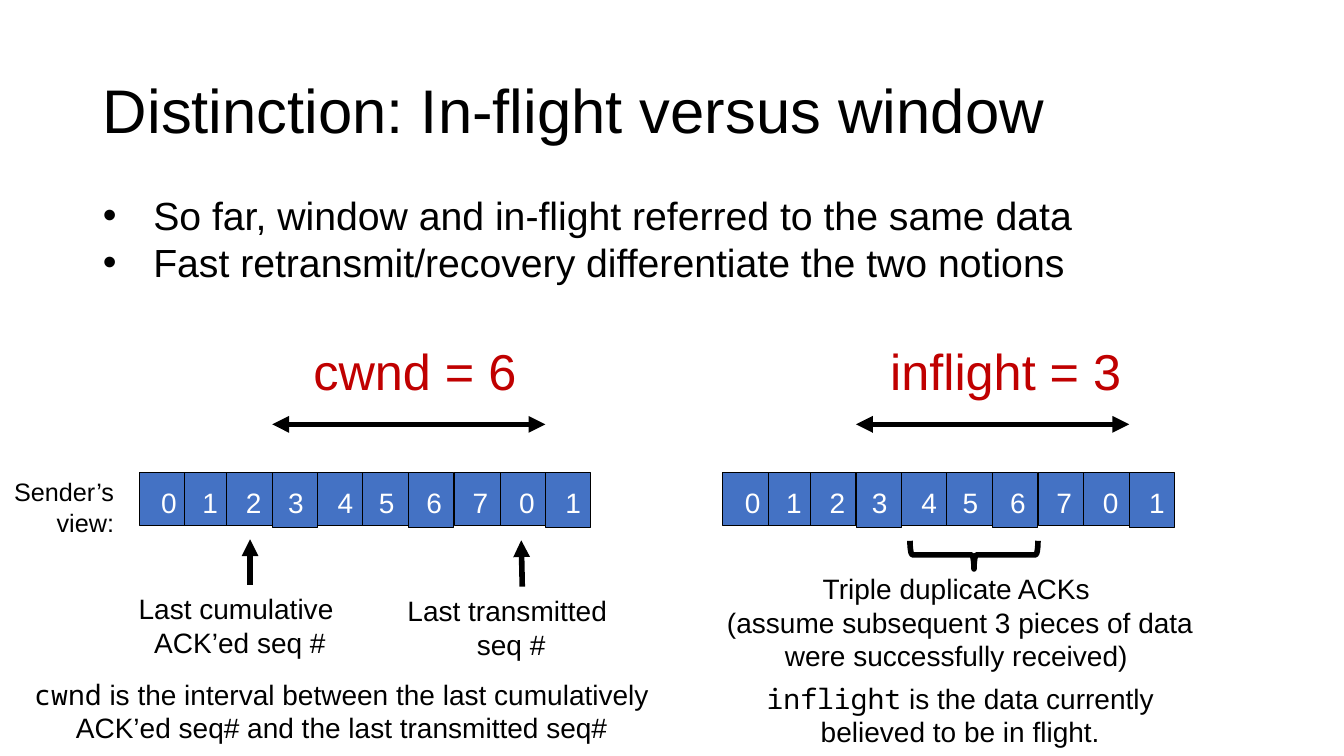
from typing import NamedTuple

from lxml import etree
from pptx import Presentation
from pptx.dml.color import RGBColor
from pptx.enum import shapes as sh, text as tx
from pptx.oxml import ns
from pptx.util import Inches, Pt

BLACK = RGBColor(0x00, 0x00, 0x00)
WHITE = RGBColor(0xFF, 0xFF, 0xFF)
BLUE = RGBColor(0x44, 0x72, 0xC4)
RED = RGBColor(0xC0, 0x00, 0x00)
SANS, MONO = "Arial", "Noto Sans Mono"
LEFT, MID, RIGHT = tx.PP_ALIGN.LEFT, tx.PP_ALIGN.CENTER, tx.PP_ALIGN.RIGHT


class Cell(NamedTuple):
    digit: str
    left: float   # box edge, from the start of the row
    text: float   # digit edge, from the start of the row


class Label(NamedTuple):
    lines: list[str]
    box: tuple[float, float, float, float]
    size: int = 20
    color: RGBColor = BLACK
    align: tx.PP_ALIGN = MID
    code: str = ""   # leading word in the code font


class Arrow(NamedTuple):
    start: tuple[float, float]
    end: tuple[float, float]
    both: bool = False


CELLS = [
    Cell("0", 0, 0.12), Cell("1", 0.45, 0.53), Cell("2", 0.87, 0.96),
    Cell("3", 1.32, 1.38), Cell("4", 1.77, 1.87), Cell("5", 2.22, 2.28),
    Cell("6", 2.67, 2.75), Cell("7", 3.13, 3.21), Cell("0", 3.58, 3.67),
    Cell("1", 4.03, 4.13),
]
ROWS = [1.38, 7.17]
TOP = 4.69

LABELS = [
    Label(["cwnd = 6"], (2.02, 3.32, 4.19, 0.71), 36, RED),
    Label(["inflight = 3"], (8.58, 3.32, 2.79, 0.71), 36, RED),
    Label(["Sender’s view:"], (-0.03, 4.68, 1.26, 0.71), 18, align=RIGHT),
    Label(["Last cumulative ", "ACK’ed seq #"], (1.14, 5.82, 2.48, 0.83)),
    Label(["Last transmitted ", "seq #"], (3.83, 5.84, 2.48, 0.77)),
    Label(["Triple duplicate ACKs",
           " (assume subsequent 3 pieces of data were successfully received)"],
          (7.01, 5.62, 4.95, 1.11)),
    Label([" is the interval between the last cumulatively ACK’ed seq# "
           "and the last transmitted seq#"],
          (0, 6.67, 6.78, 0.77), code="cwnd"),
    Label([" is the data currently believed to be in flight."],
          (7.09, 6.71, 4.87, 0.77), code="inflight"),
]

ARROWS = [
    Arrow((2.7, 4.21), (5.41, 4.21), True),
    Arrow((8.49, 4.21), (11.2, 4.21), True),
    Arrow((2.48, 5.8), (2.48, 5.35)),
    Arrow((5.18, 5.82), (5.17, 5.36)),
]


def style(run, size: int, color: RGBColor, face: str = SANS) -> None:
    run.font.size = Pt(size)
    run.font.name = face
    run.font.color.rgb = color


def place(shape, box: tuple[float, float, float, float]) -> None:
    shape.left, shape.top, shape.width, shape.height = map(Inches, box)


def add_label(slide, label: Label) -> None:
    frame = slide.shapes.add_textbox(*map(Inches, label.box)).text_frame
    frame.word_wrap = True
    frame.text = "\n".join(label.lines)
    for par in frame.paragraphs:
        par.alignment = label.align
        if label.code:
            rest = par.text
            par.text = label.code
            par.add_run().text = rest
        for run in par.runs:
            style(run, label.size, label.color, SANS)
        if label.code:
            par.runs[0].font.name = MONO


def add_arrow(slide, arrow: Arrow) -> None:
    line = slide.shapes.add_connector(
        sh.MSO_CONNECTOR.STRAIGHT, *map(Inches, arrow.start + arrow.end))
    line.line.color.rgb = BLACK
    line.line.width = Pt(4)
    stroke = line.line._get_or_add_ln()
    for tag in ["a:headEnd", "a:tailEnd"] if arrow.both else ["a:tailEnd"]:
        etree.SubElement(stroke, ns.qn(tag), type="triangle")
    etree.SubElement(line._element.spPr, ns.qn("a:effectLst"))


def add_row(slide, start: float) -> None:
    order = list(enumerate(CELLS))
    for i, cell in order[1:] + order[:1]:
        tall = i > 0 and i % 3 == 0
        box = slide.shapes.add_shape(
            sh.MSO_SHAPE.RECTANGLE, Inches(start + cell.left), Inches(TOP),
            Inches(0.45), Inches(0.54 if tall else 0.52))
        box.shadow.inherit = False
        box.fill.solid()
        box.fill.fore_color.rgb = BLUE
        box.line.color.rgb = BLACK
        box.line.width = Pt(0.75)
    for cell in CELLS:
        add_label(slide, Label([cell.digit], (start + cell.text, 4.77, 0.23, 0.34),
                               color=WHITE, align=LEFT))


def add_brace(slide) -> None:
    brace = slide.shapes.add_shape(
        sh.MSO_SHAPE.RIGHT_BRACE, *map(Inches, (9.52, 4.87, 0.28, 1.27)))
    brace.rotation = 90
    brace.shadow.inherit = False
    brace.fill.background()
    brace.line.color.rgb = BLACK
    brace.line.width = Pt(4)


def add_head(slide) -> None:
    title, body = slide.shapes.title, slide.placeholders[1]

    # Title
    place(title, (0.92, 0.4, 11.5, 1.45))
    frame = title.text_frame
    frame.text = "Distinction: In-flight versus window"
    frame.vertical_anchor = tx.MSO_ANCHOR.MIDDLE
    frame.paragraphs[0].alignment = LEFT
    frame.paragraphs[0].line_spacing = 0.9
    style(frame.paragraphs[0].runs[0], 44, BLACK)

    # Bullets
    place(body, (0.92, 1.85, 11.5, 1.04))
    frame = body.text_frame
    frame.text = ("So far, window and in-flight referred to the same data\n"
                  "Fast retransmit/recovery differentiate the two notions")
    frame.auto_size = tx.MSO_AUTO_SIZE.NONE
    for par in frame.paragraphs:
        par.space_before = Pt(0)
        props = par._p.get_or_add_pPr()
        props.set("marL", str(Inches(0.5)))
        props.set("indent", str(Inches(-0.5)))
        etree.SubElement(props, ns.qn("a:buFont"), typeface=SANS)
        etree.SubElement(props, ns.qn("a:buChar"), char="•")
        style(par.runs[0], 28, BLACK)


def main() -> None:
    deck = Presentation()
    deck.slide_width, deck.slide_height = Inches(13.33), Inches(7.5)
    slide = deck.slides.add_slide(deck.slide_layouts[1])
    add_head(slide)
    for start in ROWS:
        add_row(slide, start)
    for arrow in ARROWS:
        add_arrow(slide, arrow)
    add_brace(slide)
    for label in LABELS:
        add_label(slide, label)
    deck.save("out.pptx")


if __name__ == "__main__":
    main()
